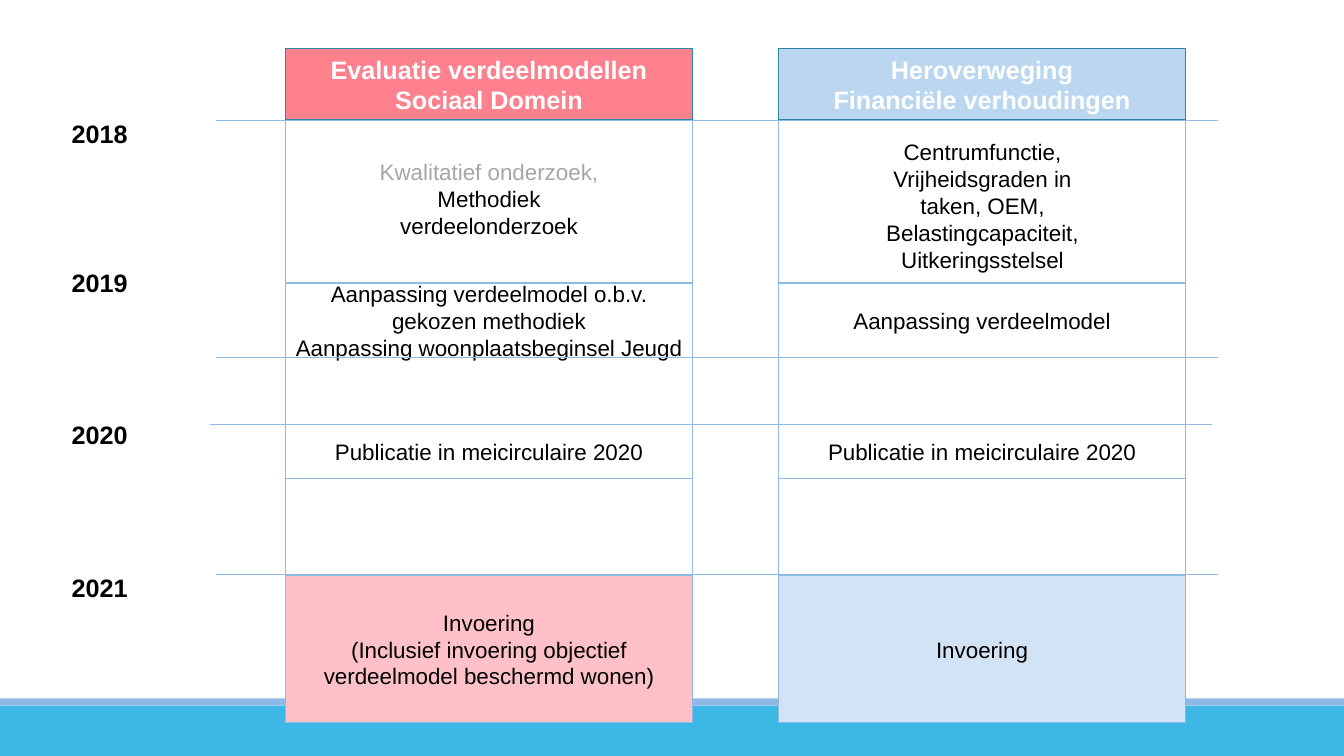
from dataclasses import dataclass
from lxml import etree
from pptx import Presentation
from pptx.dml.color import RGBColor
from pptx.enum.shapes import MSO_CONNECTOR as Connector, MSO_SHAPE as Shape
from pptx.enum.text import MSO_ANCHOR as Anchor, PP_ALIGN as Align
from pptx.oxml.ns import qn
from pptx.util import Inches, Pt


@dataclass(frozen=True)
class Theme:
    font: str = "Arial"
    heading: int = 18
    body: int = 16
    black: str = "000000"
    white: str = "FFFFFF"
    muted: str = "A6A6A6"
    border: str = "8EBAE5"
    heading_border: str = "2D87A9"
    footer: str = "3DB7E4"
    red: str = "FF818E"
    light_red: str = "FFC0C7"
    blue: str = "BBD6EF"
    light_blue: str = "D2E3F5"


theme = Theme()

YEARS = [("2018", 1.12), ("2019", 2.6), ("2020", 4.11), ("2021", 5.63)]
DIVIDERS = [(2.14, 1.19), (2.14, 3.55), (2.08, 4.21), (2.14, 5.7)]
DIVIDER_WIDTH = 9.94
COLUMN_WIDTH = 4.04
FRAME = (0.97, 4.74)
HEADING = (0.48, 0.71)
RESEARCH = (1.28, 1.46)
ROWS = {"model": (2.81, 0.74), "publication": (4.21, 0.54), "launch": (5.71, 1.46)}
FOOTER_BANDS = [(7, 0.5, theme.footer), (6.93, 0.07, theme.border)]

COLUMNS = [
    {
        "left": 2.83,
        "heading": ["Evaluatie verdeelmodellen Sociaal Domein"],
        "heading_fill": theme.red,
        "launch_fill": theme.light_red,
        "research": ["Kwalitatief onderzoek,", "Methodiek verdeelonderzoek"],
        "research_box": (3.64, 1.24, 2.42, 1.46),
        "muted_lines": 1,
        "model": ["Aanpassing verdeelmodel o.b.v. gekozen methodiek",
                  "Aanpassing woonplaatsbeginsel Jeugd"],
        "publication": ["Publicatie in meicirculaire 2020"],
        "launch": ["Invoering",
                   "(Inclusief invoering objectief verdeelmodel beschermd wonen)"],
    },
    {
        "left": 7.72,
        "heading": ["Heroverweging", "Financiële verhoudingen"],
        "heading_fill": theme.blue,
        "launch_fill": theme.light_blue,
        "research": ["Centrumfunctie,", "Vrijheidsgraden in taken, OEM,",
                     "Belastingcapaciteit,", "Uitkeringsstelsel"],
        "research_box": (8.56, 1.32, 2.37, 1.44),
        "muted_lines": 0,
        "model": ["Aanpassing verdeelmodel"],
        "publication": ["Publicatie in meicirculaire 2020"],
        "launch": ["Invoering"],
    },
]


def write(shape, lines, size=theme.body, color=theme.black, bold=False,
          align=Align.CENTER, anchor=Anchor.MIDDLE):
    frame = shape.text_frame
    frame.word_wrap = True
    frame.vertical_anchor = anchor
    frame.margin_left = frame.margin_right = Inches(0.08)
    frame.text = "\n".join(lines)
    for paragraph in frame.paragraphs:
        paragraph.alignment = align
        for run in paragraph.runs:
            run.font.name = theme.font
            run.font.size = Pt(size)
            run.font.bold = bold
            run.font.color.rgb = RGBColor.from_string(color)


def add_box(slide, box, fill=None, border=None):
    shape = slide.shapes.add_shape(Shape.RECTANGLE, *map(Inches, box))
    shape.shadow.inherit = False
    if fill:
        shape.fill.solid()
        shape.fill.fore_color.rgb = RGBColor.from_string(fill)
    else:
        shape.fill.background()
    if border:
        shape.line.color.rgb = RGBColor.from_string(border)
        shape.line.width = Pt(1)
    else:
        shape.line.fill.background()
    return shape


def add_divider(slide, left, top):
    line = slide.shapes.add_connector(
        Connector.STRAIGHT, Inches(left), Inches(top),
        Inches(left + DIVIDER_WIDTH), Inches(top))
    line.line.color.rgb = RGBColor.from_string(theme.border)
    line.line.width = Pt(0.5)
    etree.SubElement(line._element.spPr, qn("a:effectLst"))


def add_column(slide, column):
    def place(span):
        return column["left"], span[0], COLUMN_WIDTH, span[1]

    add_box(slide, place(FRAME), border=theme.border)
    heading = add_box(slide, place(HEADING), column["heading_fill"], theme.heading_border)
    write(heading, column["heading"], theme.heading, theme.white, bold=True)
    research = slide.shapes.add_textbox(*map(Inches, column["research_box"]))
    write(research, column["research"])
    for paragraph in research.text_frame.paragraphs[:column["muted_lines"]]:
        paragraph.runs[0].font.color.rgb = RGBColor.from_string(theme.muted)
    for name, span in ROWS.items():
        row = add_box(slide, place(span), column.get(f"{name}_fill"), theme.border)
        write(row, column[name])


def main():
    presentation = Presentation()
    presentation.slide_width = Inches(13.33)
    presentation.slide_height = Inches(7.5)
    slide = presentation.slides.add_slide(presentation.slide_layouts[6])
    for top, height, fill in FOOTER_BANDS:
        add_box(slide, (0, top, 13.33, height), fill)
    for year, top in YEARS:
        label = slide.shapes.add_textbox(*map(Inches, (0.63, top, 0.85, 0.4)))
        write(label, [year], theme.heading, bold=True, align=Align.LEFT, anchor=Anchor.TOP)
    for column in COLUMNS:
        add_column(slide, column)
    for left, top in DIVIDERS:
        add_divider(slide, left, top)
    presentation.save("out.pptx")


if __name__ == "__main__":
    main()
